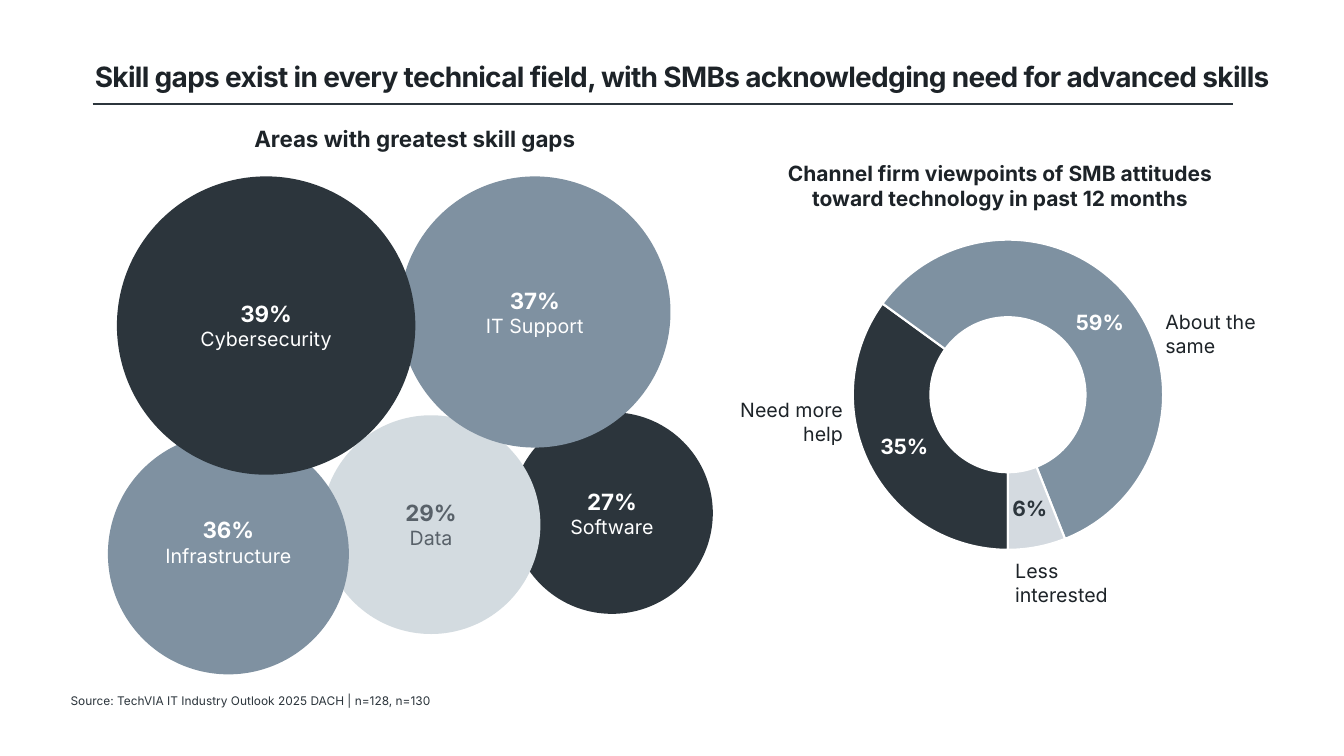
from lxml import etree
from pptx import Presentation
from pptx.chart.data import CategoryChartData
from pptx.dml.color import RGBColor
from pptx.enum.chart import XL_CHART_TYPE
from pptx.enum.shapes import MSO_CONNECTOR, MSO_SHAPE
from pptx.enum.text import MSO_ANCHOR, MSO_AUTO_SIZE, PP_ALIGN
from pptx.oxml import parse_xml
from pptx.oxml.ns import qn
from pptx.util import Inches, Pt

LEFT, CENTER, RIGHT = PP_ALIGN.LEFT, PP_ALIGN.CENTER, PP_ALIGN.RIGHT
TOP, MIDDLE = MSO_ANCHOR.TOP, MSO_ANCHOR.MIDDLE
FONT = "Inter"
COLORS = {
    "ink": "1D2328", "dark": "2C353C", "slate": "7F91A1", "light": "D3DBE0",
    "gray": "586169", "white": "FFFFFF",
    "slice slate": "7E91A1", "slice light": "D4DAE0",
}

# Content
TITLE = ("Skill gaps exist in every technical field, "
         "with SMBs acknowledging need for advanced skills")
# Back to front: share, field, left, top, diameter, fill, text color, extra bottom inset
BUBBLES = [
    ("27%", "Software", 5.07, 4.09, 2.00, "dark", "white", 0),
    ("29%", "Data", 3.19, 4.12, 2.17, "light", "gray", 0),
    ("36%", "Infrastructure", 1.07, 4.30, 2.39, "slate", "white", 0.24),
    ("37%", "IT Support", 3.96, 1.75, 2.69, "slate", "white", 0),
    ("39%", "Cybersecurity", 1.16, 1.75, 2.96, "dark", "white", 0),
]
# Answer, share, slice fill, label color, callout left, callout top, alignment
ATTITUDES = [
    ("Need more help", 0.35, "dark", "white", 7.08, 3.90, RIGHT),
    ("About the same", 0.59, "slice slate", "white", 11.46, 3.03, LEFT),
    ("Less interested", 0.06, "slice light", "dark", 9.97, 5.50, LEFT),
]
AREAS_HEADING = "Areas with greatest skill gaps"
CHART_HEADING = "Channel firm viewpoints of SMB attitudes toward technology in past 12 months"
SOURCE = "Source: TechVIA IT Industry Outlook 2025 DACH | n=128, n=130"
PLOT_AREA = {"x": 0.188, "y": 0.055, "w": 0.625, "h": 0.855}


def rgb(name):
    return RGBColor.from_string(COLORS[name])


def format_font(font, size, color, bold=False):
    font.name, font.size, font.bold = FONT, Pt(size), bold
    font.color.rgb = rgb(color)


def write_line(paragraph, text, size=14, color="ink", bold=False, align=LEFT):
    paragraph.alignment = align
    run = paragraph.add_run()
    run.text = text
    format_font(run.font, size, color, bold)
    return run


def add_text(slide, text, left, top, width, height, anchor=TOP, inset=None, **text_format):
    frame = slide.shapes.add_textbox(
        Inches(left), Inches(top), Inches(width), Inches(height)).text_frame
    frame.word_wrap = True
    frame.vertical_anchor = anchor
    if inset is not None:
        frame.margin_left = frame.margin_right = Inches(inset)
        frame.margin_top = frame.margin_bottom = Inches(inset)
    write_line(frame.paragraphs[0], text, **text_format)


def add_title(slide):
    title = slide.shapes.title
    title.left, title.top = Inches(0.84), Inches(0.43)
    title.width, title.height = Inches(11.9), Inches(0.7)
    frame = title.text_frame
    frame.auto_size = MSO_AUTO_SIZE.NONE
    frame.vertical_anchor = MIDDLE
    paragraph = frame.paragraphs[0]
    paragraph.line_spacing = 0.9
    run = write_line(paragraph, TITLE, size=20, bold=True)
    run.font._element.set("spc", "-50")

    rule = slide.shapes.add_connector(
        MSO_CONNECTOR.STRAIGHT, Inches(0.92), Inches(1.03), Inches(12.23), Inches(1.03))
    rule.line.color.rgb = rgb("dark")
    rule.line.width = Pt(1)
    etree.SubElement(rule._element.spPr, qn("a:effectLst"))


def add_bubble(slide, share, field, left, top, diameter, fill, color, extra_inset):
    bubble = slide.shapes.add_shape(
        MSO_SHAPE.OVAL, Inches(left), Inches(top), Inches(diameter), Inches(diameter))
    bubble.shadow.inherit = False
    bubble.fill.solid()
    bubble.fill.fore_color.rgb = rgb(fill)
    bubble.line.fill.background()
    frame = bubble.text_frame
    frame.word_wrap = True
    frame.vertical_anchor = MIDDLE
    frame.margin_bottom = Inches(0.05 + extra_inset)
    write_line(frame.paragraphs[0], share, size=16, color=color, bold=True, align=CENTER)
    write_line(frame.add_paragraph(), field, color=color, align=CENTER)


def add_doughnut(slide):
    data = CategoryChartData(number_format="0%")
    data.categories = [str(number) for number in range(1, len(ATTITUDES) + 1)]
    data.add_series("Series 1", [attitude[1] for attitude in ATTITUDES])
    chart = slide.shapes.add_chart(
        XL_CHART_TYPE.DOUGHNUT, Inches(7.53), Inches(2.18), Inches(4.93), Inches(3.6),
        data).chart
    chart.has_legend = chart.has_title = False
    chart.font.name, chart.font.size = "Roboto", Pt(11)
    chart.font.color.rgb = rgb("gray")
    plot = chart.plots[0]
    plot.vary_by_categories = False
    plot.has_data_labels = True
    labels = plot.data_labels
    labels.show_value, labels.show_percentage = True, False
    labels.number_format, labels.number_format_is_linked = "0%", False
    format_font(labels.font, 15, "dark", True)

    for index, (_, _, fill, label_color, *_) in enumerate(ATTITUDES):
        point = plot.series[0].points[index]
        point.format.fill.solid()
        point.format.fill.fore_color.rgb = rgb(fill)
        point.format.line.color.rgb = rgb("white")
        point.format.line.width = Pt(1.5)
        format_font(point.data_label.font, 15, label_color, True)

    # Ring rotation, hole and plot position
    chart_xml = chart._chartSpace
    for tag, value in (("c:firstSliceAng", "180"), ("c:holeSize", "54")):
        chart_xml.find(".//" + qn(tag)).set("val", value)
    plot_area = chart_xml.find(".//" + qn("c:plotArea"))
    old_layout = plot_area.find(qn("c:layout"))
    if old_layout is not None:
        plot_area.remove(old_layout)
    modes = '<c:layoutTarget val="inner"/><c:xMode val="edge"/><c:yMode val="edge"/>'
    sizes = "".join(f'<c:{key} val="{value}"/>' for key, value in PLOT_AREA.items())
    plot_area.insert(0, parse_xml(
        '<c:layout xmlns:c="http://schemas.openxmlformats.org/drawingml/2006/chart">'
        f"<c:manualLayout>{modes}{sizes}</c:manualLayout></c:layout>"))


def main():
    presentation = Presentation()
    presentation.slide_width, presentation.slide_height = Inches(13.33), Inches(7.5)
    slide = presentation.slides.add_slide(presentation.slide_layouts[5])
    add_title(slide)

    # Skill gap bubbles
    for bubble in BUBBLES:
        add_bubble(slide, *bubble)
    add_text(slide, SOURCE, 0.7, 6.85, 7, 0.2, anchor=MIDDLE, inset=0, size=8.5, color="dark")
    add_text(slide, AREAS_HEADING, 1.39, 1.19, 5.45, 0.37, size=16, bold=True, align=CENTER)

    # Attitude chart with callouts
    add_doughnut(slide)
    add_text(slide, CHART_HEADING, 7.69, 1.54, 4.46, 0.61, size=15, bold=True, align=CENTER)
    for answer, _, _, _, left, top, align in ATTITUDES:
        add_text(slide, answer, left, top, 1.38, 0.57, align=align)

    presentation.save("out.pptx")


if __name__ == "__main__":
    main()
